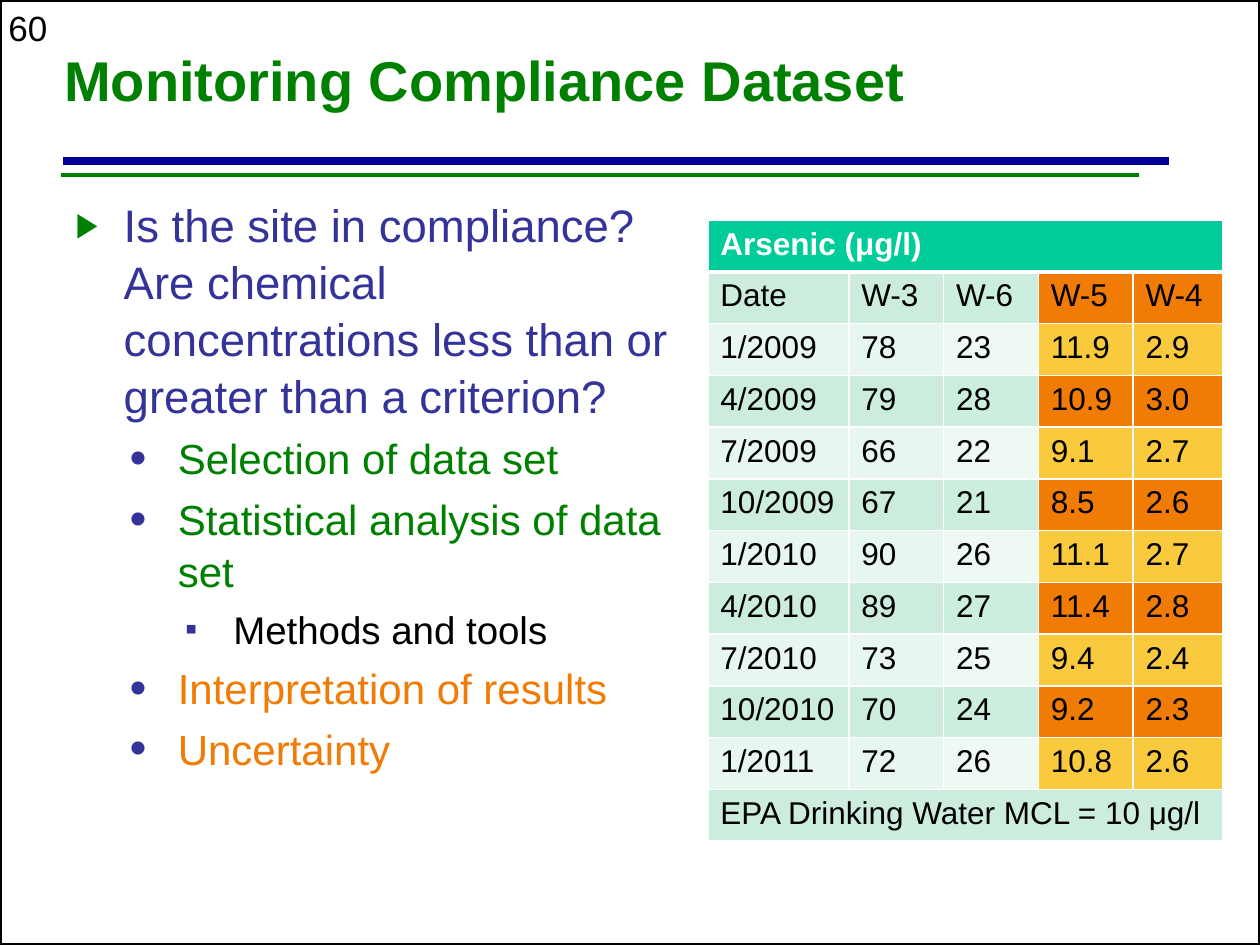
from lxml import etree
from pptx import Presentation
from pptx import util as u
from pptx.dml.color import RGBColor
from pptx.enum import shapes, text
from pptx.oxml import ns

COLORS = {
    "white": "FFFFFF", "black": "000000", "navy": "000099", "green": "008000",
    "indigo": "333399", "orange": "F07B05", "yellow": "FACA3E", "teal": "00CC99",
    "mint": "CCECDE", "pale mint": "E7F6EF", "aqua": "CCEEDF", "pale aqua": "EEF9F4",
}
LEVELS = [
    {"bullet": "▶", "bullet_color": "green", "percent": 75, "size": 26, "margin": 0.97},
    {"bullet": "•", "bullet_color": "indigo", "percent": 115, "size": 24, "margin": 2.06},
    {"bullet": "▪", "bullet_color": "indigo", "percent": 90, "size": 22, "margin": 3.18},
]
OUTLINE = [
    (0, "Is the site in compliance? Are chemical concentrations less than or greater than a criterion?", "indigo"),
    (1, "Selection of data set", "green"),
    (1, "Statistical analysis of data set", "green"),
    (2, "Methods and tools", "black"),
    (1, "Interpretation of results", "orange"),
    (1, "Uncertainty", "orange"),
]
ARSENIC = [
    ("Arsenic (μg/l)",),
    ("Date", "W-3", "W-6", "W-5", "W-4"),
    ("1/2009", "78", "23", "11.9", "2.9"),
    ("4/2009", "79", "28", "10.9", "3.0"),
    ("7/2009", "66", "22", "9.1", "2.7"),
    ("10/2009", "67", "21", "8.5", "2.6"),
    ("1/2010", "90", "26", "11.1", "2.7"),
    ("4/2010", "89", "27", "11.4", "2.8"),
    ("7/2010", "73", "25", "9.4", "2.4"),
    ("10/2010", "70", "24", "9.2", "2.3"),
    ("1/2011", "72", "26", "10.8", "2.6"),
    ("EPA Drinking Water MCL = 10 μg/l",),
]
COLUMN_WIDTHS = [2.84, 1.91, 1.91, 1.91, 1.8]
DARK_BAND = ["mint", "mint", "aqua", "orange", "orange"]
LIGHT_BAND = ["pale mint", "pale mint", "pale aqua", "yellow", "yellow"]


class SlideBuilder:
    """Holds the style and the current slide and adds each kind of element."""

    def __init__(self, slide, font="Arial"):
        self.slide = slide
        self.font = font

    def color(self, name):
        return RGBColor.from_string(COLORS[name])

    def place(self, shape, left, top, width, height):
        shape.left, shape.top = u.Cm(left), u.Cm(top)
        shape.width, shape.height = u.Cm(width), u.Cm(height)

    def run(self, paragraph, words, size, color, bold=False):
        run = paragraph.add_run()
        run.text = words
        run.font.name = self.font
        run.font.size = u.Pt(size)
        run.font.bold = bold
        run.font.color.rgb = self.color(color)

    def rule(self, left, right, y, color, width):
        line = self.slide.shapes.add_connector(
            shapes.MSO_CONNECTOR.STRAIGHT, u.Cm(left), u.Cm(y), u.Cm(right), u.Cm(y))
        line.line.color.rgb = self.color(color)
        line.line.width = u.Pt(width)
        etree.SubElement(line._element.spPr, ns.qn("a:effectLst"))

    def frame(self, width, height):
        shape = self.slide.shapes.add_shape(
            shapes.MSO_SHAPE.RECTANGLE, 0, 0, u.Cm(width), u.Cm(height))
        shape.shadow.inherit = False
        shape.fill.background()
        shape.line.color.rgb = self.color("black")
        shape.line.width = u.Pt(2)

    def number(self, words, *box):
        shape = self.slide.shapes.add_textbox(*map(u.Cm, box))
        shape.text_frame.word_wrap = False
        self.run(shape.text_frame.paragraphs[0], words, 20, "black")

    def title(self, words, *box):
        shape = self.slide.shapes.title
        self.place(shape, *box)
        shape.text_frame.vertical_anchor = text.MSO_ANCHOR.MIDDLE
        paragraph = shape.text_frame.paragraphs[0]
        paragraph.alignment = text.PP_ALIGN.LEFT
        paragraph.line_spacing = 0.85
        self.run(paragraph, words, 32, "green", bold=True)

    def bullet(self, paragraph, style):
        properties = paragraph._p.get_or_add_pPr()
        properties.set("marL", str(u.Cm(style["margin"])))
        properties.set("indent", str(u.Cm(-0.97)))
        color = etree.SubElement(properties, ns.qn("a:buClr"))
        etree.SubElement(color, ns.qn("a:srgbClr"), val=COLORS[style["bullet_color"]])
        etree.SubElement(properties, ns.qn("a:buSzPct"), val=str(style["percent"] * 1000))
        etree.SubElement(properties, ns.qn("a:buFont"), typeface=self.font)
        etree.SubElement(properties, ns.qn("a:buChar"), char=style["bullet"])

    def outline(self, items, *box):
        shape = self.slide.placeholders[1]
        self.place(shape, *box)
        frame = shape.text_frame
        frame.auto_size = text.MSO_AUTO_SIZE.NONE
        for index, (level, words, color) in enumerate(items):
            paragraph = frame.add_paragraph() if index else frame.paragraphs[0]
            style = LEVELS[level]
            paragraph.level = level
            paragraph.line_spacing = 1.04
            paragraph.space_before = u.Pt(0.2 * style["size"] if index else 0)
            self.bullet(paragraph, style)
            self.run(paragraph, words, style["size"], color)

    def cell(self, cell, words, fill, color="black", bold=False, bottom=1):
        cell.fill.solid()
        cell.fill.fore_color.rgb = self.color(fill)
        properties = cell._tc.get_or_add_tcPr()
        for index, (side, width) in enumerate(zip("LRTB", (1, 1, 1, bottom))):
            border = etree.Element(ns.qn(f"a:ln{side}"), w=str(u.Pt(width)))
            paint = etree.SubElement(border, ns.qn("a:solidFill"))
            etree.SubElement(paint, ns.qn("a:srgbClr"), val=COLORS["white"])
            properties.insert(index, border)
        self.run(cell.text_frame.paragraphs[0], words, 18, color, bold)

    def table(self, rows, widths, left, top, height):
        table = self.slide.shapes.add_table(
            len(rows), len(widths), u.Cm(left), u.Cm(top), u.Cm(sum(widths)), u.Cm(height)).table
        for column, width in zip(table.columns, widths):
            column.width = u.Cm(width)
        for row, values in enumerate(rows):
            if len(values) == 1:
                table.cell(row, 0).merge(table.cell(row, len(widths) - 1))
            fills = DARK_BAND if row % 2 else LIGHT_BAND
            for column, words in enumerate(values):
                cell = table.cell(row, column)
                if row == 0:
                    self.cell(cell, words, "teal", "white", bold=True, bottom=3)
                else:
                    self.cell(cell, words, fills[column])


def main():
    presentation = Presentation()
    presentation.slide_width, presentation.slide_height = u.Cm(25.4), u.Cm(19.05)
    builder = SlideBuilder(presentation.slides.add_slide(presentation.slide_layouts[1]))
    builder.rule(1.27, 23.57, 3.25, "navy", 4.5)
    builder.rule(1.22, 22.96, 3.53, "green", 2)
    builder.number("60", -0.08, 0, 1.37, 1.09)
    builder.frame(25.4, 19.05)
    builder.title("Monitoring Compliance Dataset", 1.04, 0.25, 21.08, 2.92)
    builder.outline(OUTLINE, 1.27, 3.81, 13, 12.7)
    builder.table(ARSENIC, COLUMN_WIDTHS, 14.27, 4.44, 12.52)
    presentation.save("out.pptx")


if __name__ == "__main__":
    main()
